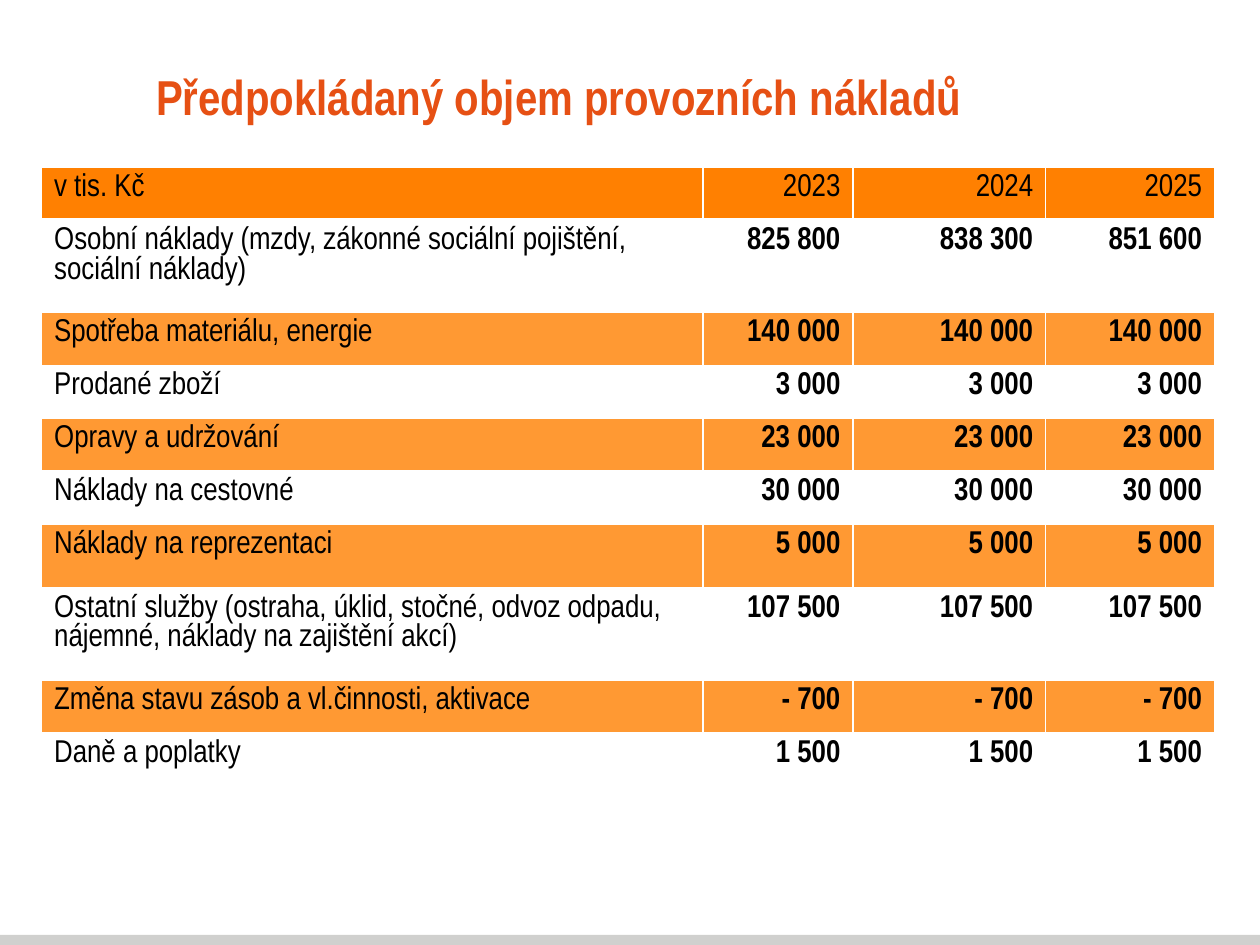
from lxml import etree
from pptx import Presentation
from pptx.dml.color import RGBColor
from pptx.enum.shapes import MSO_SHAPE
from pptx.enum.text import MSO_ANCHOR, PP_ALIGN
from pptx.oxml.ns import qn
from pptx.util import Inches, Pt

RECTANGLE = MSO_SHAPE.RECTANGLE
MIDDLE = MSO_ANCHOR.MIDDLE
LEFT, RIGHT = PP_ALIGN.LEFT, PP_ALIGN.RIGHT

WIDTH, HEIGHT = 10, 7.5
FONT = "Arial Narrow"
COLORS = {
    "title": "E65014",
    "header": "FF8001",
    "band": "FF9933",
    "plain": "FFFFFF",
    "rule": "FFFFFF",
    "text": "000000",
    "footer": "D0D0CE",
}
COLUMN_WIDTHS = [5.25, 1.19, 1.53, 1.34]
ROW_HEIGHT, TALL_ROW, TWO_LINE_ROW = 0.42, 0.51, 0.73
COSTS = [
    (["v tis. Kč"], ["2023", "2024", "2025"], ROW_HEIGHT),
    (["Osobní náklady (mzdy, zákonné sociální pojištění,", "sociální náklady)"],
     ["825 800", "838 300", "851 600"], TWO_LINE_ROW),
    (["Spotřeba materiálu, energie"], ["140 000"] * 3, ROW_HEIGHT),
    (["Prodané zboží"], ["3 000"] * 3, ROW_HEIGHT),
    (["Opravy a udržování"], ["23 000"] * 3, ROW_HEIGHT),
    (["Náklady na cestovné"], ["30 000"] * 3, ROW_HEIGHT),
    (["Náklady na reprezentaci"], ["5 000"] * 3, TALL_ROW),
    (["Ostatní služby (ostraha, úklid, stočné, odvoz odpadu,",
      "nájemné, náklady na zajištění akcí)"], ["107 500"] * 3, TWO_LINE_ROW),
    (["Změna stavu zásob a vl.činnosti, aktivace"], ["- 700"] * 3, ROW_HEIGHT),
    (["Daně a poplatky"], ["1 500"] * 3, ROW_HEIGHT),
    ([], [], ROW_HEIGHT),
    ([], [], ROW_HEIGHT),
]


def color(name):
    return RGBColor.from_string(COLORS[name])


def add_run(paragraph, text, size, color_name, bold):
    run = paragraph.add_run()
    run.text = text
    run.font.name = FONT
    run.font.size = Pt(size)
    run.font.bold = bold
    run.font.color.rgb = color(color_name)


def add_footer_band(slide):
    depth = 0.08
    band = slide.shapes.add_shape(RECTANGLE, 0, Inches(HEIGHT - depth),
                                  Inches(WIDTH), Inches(depth))
    band.shadow.inherit = False
    band.fill.solid()
    band.fill.fore_color.rgb = color("footer")
    band.line.fill.background()


def add_title(slide, text):
    title = slide.shapes.add_textbox(Inches(1.14), Inches(0.36), Inches(8.11), Inches(0.81))
    frame = title.text_frame
    frame.word_wrap = True
    frame.vertical_anchor = MIDDLE
    add_run(frame.paragraphs[0], text, 28, "title", True)


def set_borders(cell, **points):
    """Draw the cell's edges; points maps each side (L, R, T, B) to a line width."""
    properties = cell._tc.get_or_add_tcPr()
    for side, width in points.items():
        edge = etree.SubElement(properties, qn(f"a:ln{side}"), w=str(Pt(width)))
        fill = etree.SubElement(edge, qn("a:solidFill"))
        etree.SubElement(fill, qn("a:srgbClr"), val=COLORS["rule"])


def fill_cell(cell, lines, fill_name, align, bold):
    cell.fill.solid()
    cell.fill.fore_color.rgb = color(fill_name)
    frame = cell.text_frame
    for index, line in enumerate(lines):
        paragraph = frame.add_paragraph() if index else frame.paragraphs[0]
        paragraph.alignment = align
        paragraph.line_spacing = 1.0
        add_run(paragraph, line, 18, "text", bold)


def row_fill(row):
    if row == 0:
        return "header"
    is_band = row % 2 == 0 and COSTS[row][0]
    return "band" if is_band else "plain"


def add_cost_table(slide):
    table = slide.shapes.add_table(
        len(COSTS), len(COLUMN_WIDTHS), Inches(0.33), Inches(1.33),
        Inches(sum(COLUMN_WIDTHS)), Inches(sum(height for _, _, height in COSTS))).table
    table.first_row = False
    table.horz_banding = False
    for column, width in zip(table.columns, COLUMN_WIDTHS):
        column.width = Inches(width)

    for row, (label, amounts, height) in enumerate(COSTS):
        table.rows[row].height = Inches(height)
        contents = [label] + [[amount] for amount in amounts]
        for column in range(len(COLUMN_WIDTHS)):
            cell = table.cell(row, column)
            set_borders(cell, L=1, R=1, T=3 if row == 1 else 1, B=3 if row == 0 else 1)
            lines = contents[column] if column < len(contents) else []
            fill_cell(cell, lines, row_fill(row), RIGHT if column else LEFT,
                      row > 0 and column > 0)


def main():
    presentation = Presentation()
    presentation.slide_width = Inches(WIDTH)
    presentation.slide_height = Inches(HEIGHT)
    slide = presentation.slides.add_slide(presentation.slide_layouts[6])
    add_footer_band(slide)
    add_title(slide, "Předpokládaný objem provozních nákladů")
    add_cost_table(slide)
    presentation.save("out.pptx")


if __name__ == "__main__":
    main()
